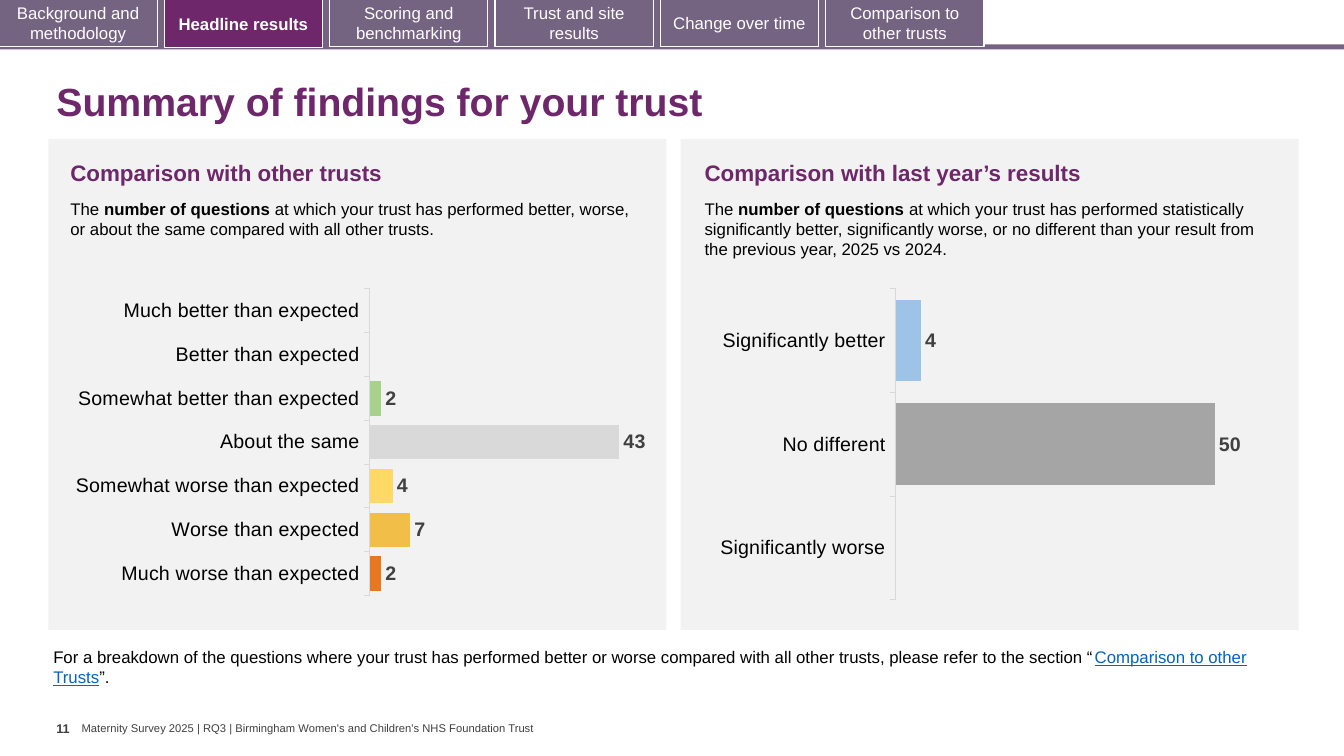
from dataclasses import dataclass

from pptx import Presentation
from pptx.chart.data import CategoryChartData
from pptx.dml.color import RGBColor
from pptx.enum.chart import XL_CHART_TYPE, XL_LABEL_POSITION, XL_TICK_MARK
from pptx.enum.shapes import MSO_SHAPE
from pptx.enum.text import MSO_ANCHOR, PP_ALIGN
from pptx.oxml import parse_xml
from pptx.oxml.ns import nsdecls
from pptx.util import Inches, Pt

FONT = "Arial"
PURPLE = RGBColor(0x6D, 0x27, 0x6A)
MAUVE = RGBColor(0x75, 0x63, 0x82)
WHITE = RGBColor(0xFF, 0xFF, 0xFF)
BLACK = RGBColor(0, 0, 0)
DARK_GREY = RGBColor(0x40, 0x40, 0x40)
PANEL_GREY = RGBColor(0xF2, 0xF2, 0xF2)
AXIS_GREY = RGBColor(0xD9, 0xD9, 0xD9)
LINK_BLUE = RGBColor(0x05, 0x63, 0xC1)
TEAL = RGBColor(0x41, 0x99, 0x99)
MID_GREEN = RGBColor(0x5F, 0xBD, 0x83)
LIGHT_GREEN = RGBColor(0xA9, 0xD1, 0x8E)
YELLOW = RGBColor(0xFF, 0xD9, 0x66)
AMBER = RGBColor(0xF1, 0xBE, 0x48)
ORANGE = RGBColor(0xE8, 0x77, 0x22)
LIGHT_BLUE = RGBColor(0x9D, 0xC3, 0xE6)
MID_GREY = RGBColor(0xA5, 0xA5, 0xA5)
VIOLET = RGBColor(0x70, 0x30, 0xA0)


@dataclass(frozen=True)
class Box:
    left: float
    top: float
    width: float
    height: float

    def lengths(self) -> tuple:
        return tuple(Inches(v) for v in (self.left, self.top, self.width, self.height))


@dataclass(frozen=True)
class TextRun:
    text: str
    size: float = 12
    color: RGBColor = BLACK
    bold: bool = False
    underline: bool = False


@dataclass(frozen=True)
class Bar:
    category: str
    value: int | None
    color: RGBColor


@dataclass(frozen=True)
class Panel:
    left: float
    text_left: float
    text_width: float
    heading: str
    description: str
    chart_box: Box
    plot: Box
    maximum: int
    bars: tuple[Bar, ...]


TABS = ("Background and methodology", "Headline results", "Scoring and benchmarking",
        "Trust and site results", "Change over time", "Comparison to other trusts")
ACTIVE_TAB = "Headline results"
TAB_PITCH = 1.64

PANELS = (
    Panel(0.48, 0.6, 5.92, "Comparison with other trusts",
          "at which your trust has performed better, worse, or about the same "
          "compared with all other trusts.",
          Box(0.48, 2.62, 6.13, 3.5), Box(0.52, 0.07, 0.47, 0.87), 50,
          (Bar("Much better than expected", None, TEAL),
           Bar("Better than expected", None, MID_GREEN),
           Bar("Somewhat better than expected", 2, LIGHT_GREEN),
           Bar("About the same", 43, AXIS_GREY),
           Bar("Somewhat worse than expected", 4, YELLOW),
           Bar("Worse than expected", 7, AMBER),
           Bar("Much worse than expected", 2, ORANGE))),
    Panel(6.75, 6.89, 5.74, "Comparison with last year’s results",
          "at which your trust has performed statistically significantly better, "
          "significantly worse, or no different than your result from the previous "
          "year, 2025 vs 2024.",
          Box(6.64, 2.73, 6.23, 3.39), Box(0.36, 0.04, 0.61, 0.91), 60,
          (Bar("Significantly better", 4, LIGHT_BLUE),
           Bar("No different", 50, MID_GREY),
           Bar("Significantly worse", None, VIOLET))),
)


def add_runs(paragraph, *runs: TextRun) -> None:
    for item in runs:
        run = paragraph.add_run()
        run.text = item.text
        run.font.name = FONT
        run.font.size = Pt(item.size)
        run.font.color.rgb = item.color
        run.font.bold = item.bold
        run.font.underline = item.underline


def add_text(slide, box: Box, *runs: TextRun, wrap: bool = True):
    frame = slide.shapes.add_textbox(*box.lengths()).text_frame
    frame.word_wrap = wrap
    add_runs(frame.paragraphs[0], *runs)
    return frame


def add_block(slide, box: Box, color: RGBColor):
    shape = slide.shapes.add_shape(MSO_SHAPE.RECTANGLE, *box.lengths())
    shape.shadow.inherit = False
    shape.fill.solid()
    shape.fill.fore_color.rgb = color
    shape.line.fill.background()
    return shape


def add_tab(slide, index: int, label: str) -> None:
    active = label == ACTIVE_TAB
    box = Box(TAB_PITCH * index - 0.01, 0 if active else -0.01, 1.57, 0.47)
    tab = add_block(slide, box, PURPLE if active else MAUVE)
    tab.line.color.rgb = WHITE
    tab.line.width = Pt(0.75)
    frame = tab.text_frame
    frame.word_wrap = True
    frame.vertical_anchor = MSO_ANCHOR.MIDDLE
    frame.paragraphs[0].alignment = PP_ALIGN.CENTER
    add_runs(frame.paragraphs[0], TextRun(label, color=WHITE, bold=active))


def format_font(font, color: RGBColor, bold: bool = False) -> None:
    font.name = FONT
    font.size = Pt(14)
    font.color.rgb = color
    font.bold = bold


def place_plot(chart, plot: Box) -> None:
    area = chart.plots[0]._element.getparent()
    for layout in area.findall("{*}layout"):
        area.remove(layout)
    area.insert(0, parse_xml(
        f'<c:layout {nsdecls("c")}><c:manualLayout><c:layoutTarget val="inner"/>'
        '<c:xMode val="edge"/><c:yMode val="edge"/>'
        f'<c:x val="{plot.left}"/><c:y val="{plot.top}"/>'
        f'<c:w val="{plot.width}"/><c:h val="{plot.height}"/>'
        '</c:manualLayout></c:layout>'))


def add_bar_chart(slide, panel: Panel) -> None:
    data = CategoryChartData(number_format="0")
    data.categories = [bar.category for bar in panel.bars]
    data.add_series("Series 1", [bar.value for bar in panel.bars])
    chart = slide.shapes.add_chart(
        XL_CHART_TYPE.BAR_CLUSTERED, *panel.chart_box.lengths(), data).chart
    chart.has_title = False
    chart.has_legend = False
    format_font(chart.font, BLACK)
    place_plot(chart, panel.plot)

    category_axis = chart.category_axis
    category_axis.reverse_order = True
    category_axis.major_tick_mark = XL_TICK_MARK.OUTSIDE
    category_axis.minor_tick_mark = XL_TICK_MARK.NONE
    category_axis.format.line.color.rgb = AXIS_GREY
    category_axis.format.line.width = Pt(0.75)
    format_font(category_axis.tick_labels.font, BLACK)

    value_axis = chart.value_axis
    value_axis.minimum_scale = 0
    value_axis.maximum_scale = panel.maximum
    value_axis.has_major_gridlines = False
    value_axis.visible = False

    plot = chart.plots[0]
    plot.gap_width = 27
    plot.vary_by_categories = False
    series = plot.series[0]
    for index, bar in enumerate(panel.bars):
        fill = series.points[index].format.fill
        fill.solid()
        fill.fore_color.rgb = bar.color
    labels = series.data_labels
    labels.show_value = True
    labels.position = XL_LABEL_POSITION.OUTSIDE_END
    format_font(labels.font, DARK_GREY, bold=True)


def add_panel(slide, panel: Panel) -> None:
    add_block(slide, Box(panel.left, 1.38, 6.13, 4.87), PANEL_GREY)
    add_text(slide, Box(panel.text_left, 1.53, 5.6, 0.37),
             TextRun(panel.heading, 16, PURPLE, bold=True))
    add_text(slide, Box(panel.text_left, 1.92, panel.text_width, 0.71),
             TextRun("The "), TextRun("number of questions ", bold=True),
             TextRun(panel.description))
    add_bar_chart(slide, panel)


def add_title(slide, text: str) -> None:
    title = slide.shapes.title
    title.left, title.top, title.width, title.height = Box(0.46, 0.67, 12.49, 0.72).lengths()
    title.text_frame.vertical_anchor = MSO_ANCHOR.MIDDLE
    paragraph = title.text_frame.paragraphs[0]
    paragraph.alignment = PP_ALIGN.LEFT
    paragraph.line_spacing = 0.9
    add_runs(paragraph, TextRun(text, 28, PURPLE, bold=True))


def add_footer(slide) -> None:
    footer = add_text(
        slide, Box(0.81, 7.16, 4.54, 0.13),
        TextRun("Maternity Survey 2025 | RQ3 | Birmingham Women's and Children's "
                "NHS Foundation Trust", 8, DARK_GREY), wrap=False)
    footer.vertical_anchor = MSO_ANCHOR.MIDDLE
    footer.margin_left = footer.margin_right = footer.margin_top = footer.margin_bottom = 0
    number = add_text(slide, Box(0.56, 7.1, 0.25, 0.4),
                      TextRun("11", 9, DARK_GREY, bold=True), wrap=False)
    number.margin_left = number.margin_right = 0


def main() -> None:
    presentation = Presentation()
    presentation.slide_width = Inches(13.33)
    presentation.slide_height = Inches(7.5)
    slide = presentation.slides.add_slide(presentation.slide_layouts[5])
    add_block(slide, Box(-0.03, 0.44, 13.39, 0.05), MAUVE)
    add_block(slide, Box(-0.03, 0, 9.57, 0.47), MAUVE)
    for index, label in enumerate(TABS):
        add_tab(slide, index, label)
    add_title(slide, "Summary of findings for your trust")
    for panel in PANELS:
        add_panel(slide, panel)
    add_text(slide, Box(0.43, 6.37, 12.21, 0.5),
             TextRun("For a breakdown of the questions where your trust has performed better or "
                     "worse compared with all other trusts, please refer to the section “"),
             TextRun("Comparison to other Trusts", color=LINK_BLUE, underline=True),
             TextRun("”."))
    add_footer(slide)
    presentation.save("out.pptx")


if __name__ == "__main__":
    main()
